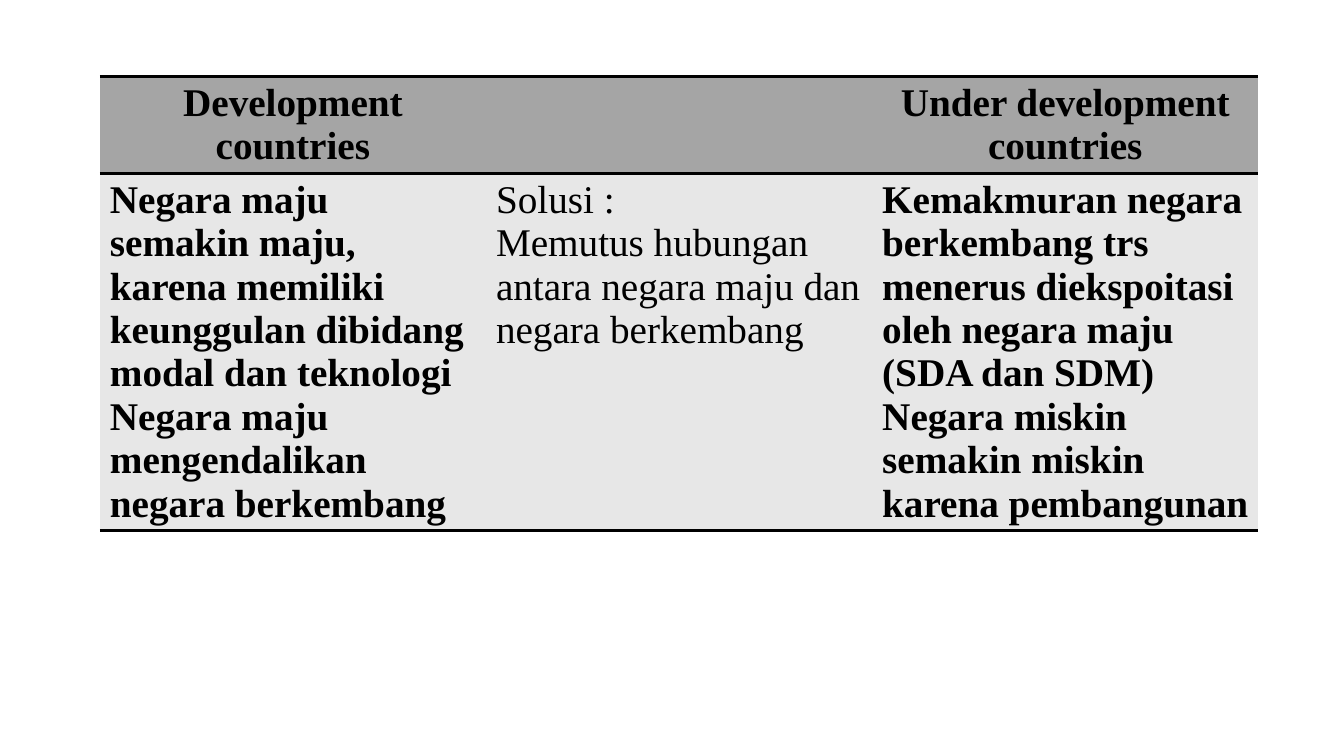
from lxml import etree
from pptx import Presentation
from pptx.dml.color import RGBColor
from pptx.enum.text import PP_ALIGN
from pptx.oxml.ns import qn
from pptx.util import Inches, Pt

CENTER, LEFT = PP_ALIGN.CENTER, PP_ALIGN.LEFT

HEADINGS = [["Development countries"], [], ["Under development countries"]]
THEORY = [
    [
        "Negara maju semakin maju, karena memiliki keunggulan dibidang modal dan teknologi",
        "Negara maju mengendalikan negara berkembang",
    ],
    [
        "Solusi :",
        "Memutus hubungan antara negara maju dan negara berkembang",
    ],
    [
        "Kemakmuran negara berkembang trs menerus diekspoitasi oleh negara maju (SDA dan SDM)",
        "Negara miskin semakin miskin karena pembangunan",
    ],
]
ROWS = [
    {"cells": HEADINGS, "height": 0.96, "fill": "A5A5A5", "align": CENTER},
    {"cells": THEORY, "height": 3.54, "fill": "E7E7E7", "align": LEFT},
]
BOLD_COLUMNS = (0, 2)
COLUMN_WIDTH = 3.83
TABLE_LEFT, TABLE_TOP = 0.99, 0.76
FONT, FONT_SIZE, INK = "Times New Roman", 28, "000000"
RULE_WIDTH = 2


def color(value):
    return RGBColor.from_string(value)


def set_borders(cell):
    properties = cell._tc.get_or_add_tcPr()
    for position, side in enumerate(("lnL", "lnR", "lnT", "lnB")):
        line = etree.Element(qn("a:" + side), w=str(Pt(RULE_WIDTH)))
        if side in ("lnT", "lnB"):
            fill = etree.SubElement(line, qn("a:solidFill"))
            etree.SubElement(fill, qn("a:srgbClr"), val=INK)
        else:
            etree.SubElement(line, qn("a:noFill"))
        properties.insert(position, line)


def write_cell(cell, lines, align, bold):
    for number, text in enumerate(lines):
        frame = cell.text_frame
        para = frame.add_paragraph() if number else frame.paragraphs[0]
        para.alignment = align
        span = para.add_run()
        span.text = text
        span.font.name = FONT
        span.font.size = Pt(FONT_SIZE)
        span.font.bold = bold
        span.font.color.rgb = color(INK)


deck = Presentation()
deck.slide_width, deck.slide_height = Inches(13.33), Inches(7.5)
page = deck.slides.add_slide(deck.slide_layouts[6])

table = page.shapes.add_table(
    len(ROWS), len(HEADINGS), Inches(TABLE_LEFT), Inches(TABLE_TOP),
    Inches(COLUMN_WIDTH * len(HEADINGS)),
    Inches(sum(row["height"] for row in ROWS)),
).table
table.horz_banding = False
for column in table.columns:
    column.width = Inches(COLUMN_WIDTH)

for row_index, row in enumerate(ROWS):
    table.rows[row_index].height = Inches(row["height"])
    for column_index, lines in enumerate(row["cells"]):
        cell = table.cell(row_index, column_index)
        cell.fill.solid()
        cell.fill.fore_color.rgb = color(row["fill"])
        set_borders(cell)
        write_cell(cell, lines, row["align"], column_index in BOLD_COLUMNS)

deck.save("out.pptx")
